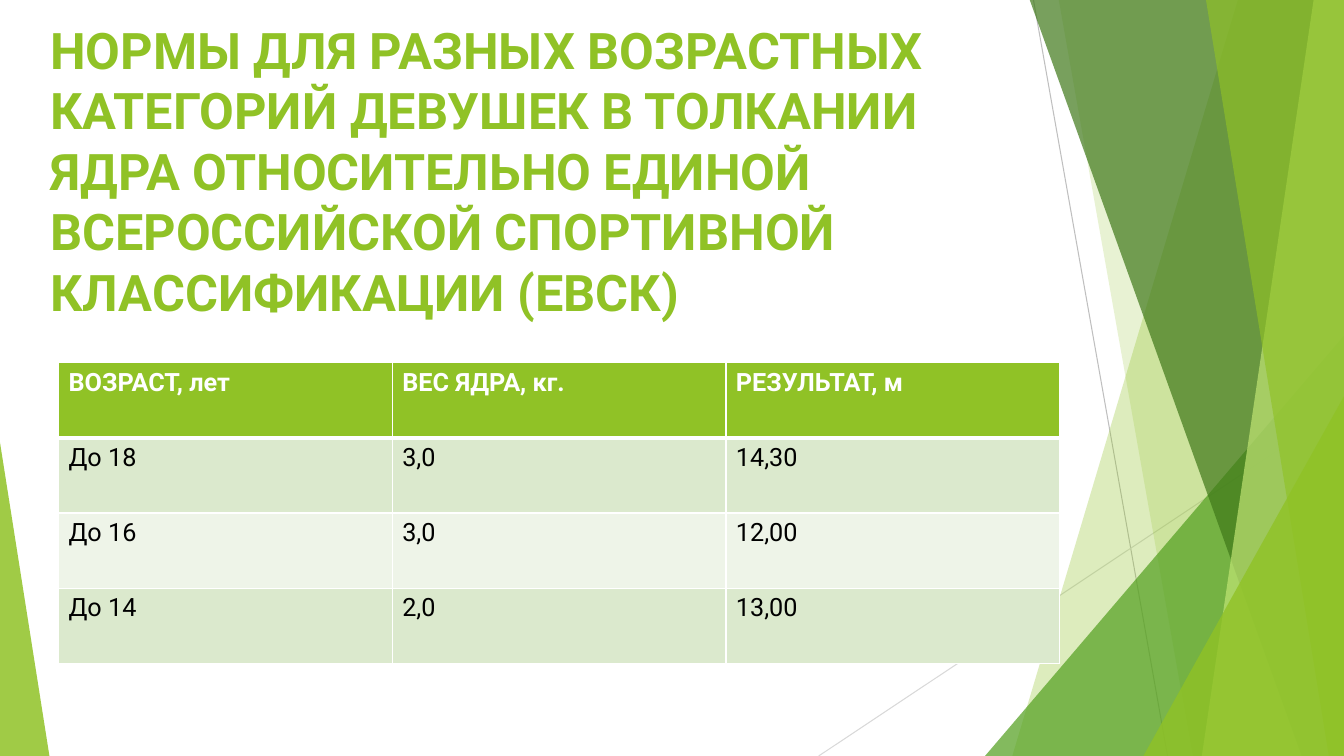
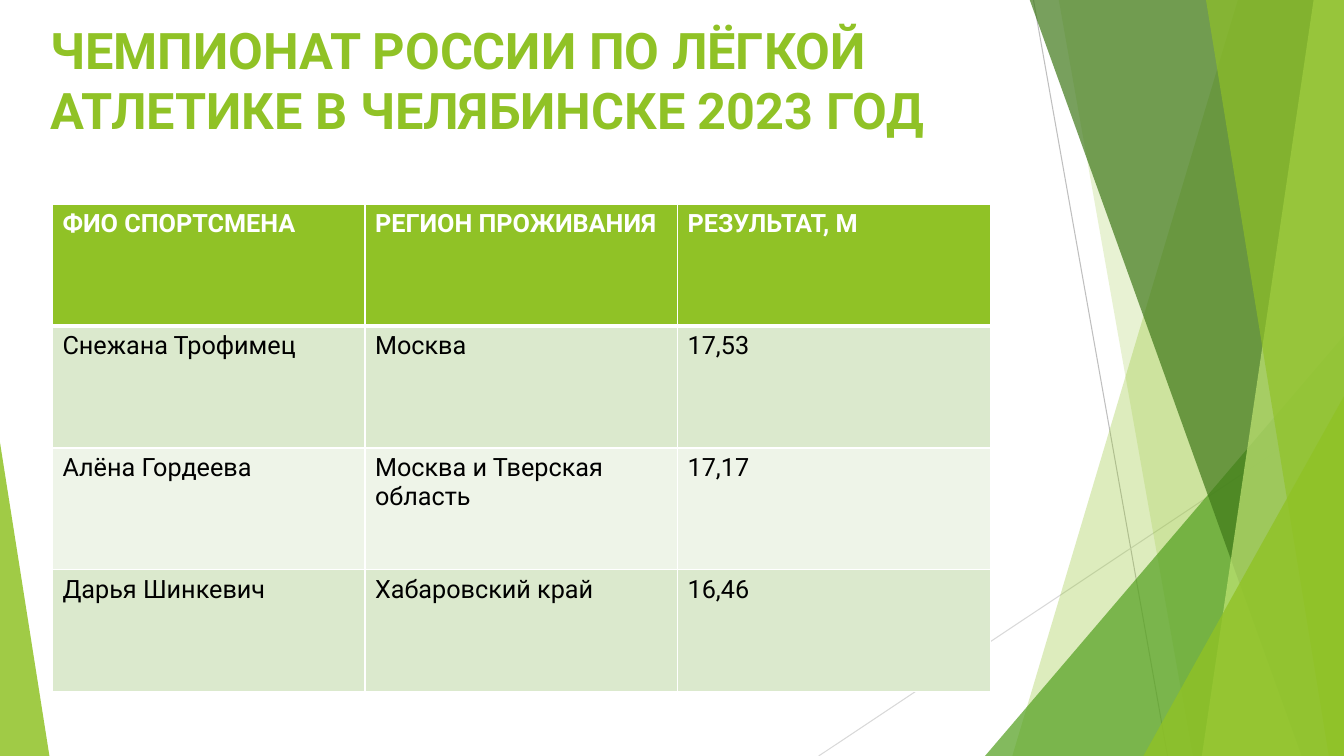
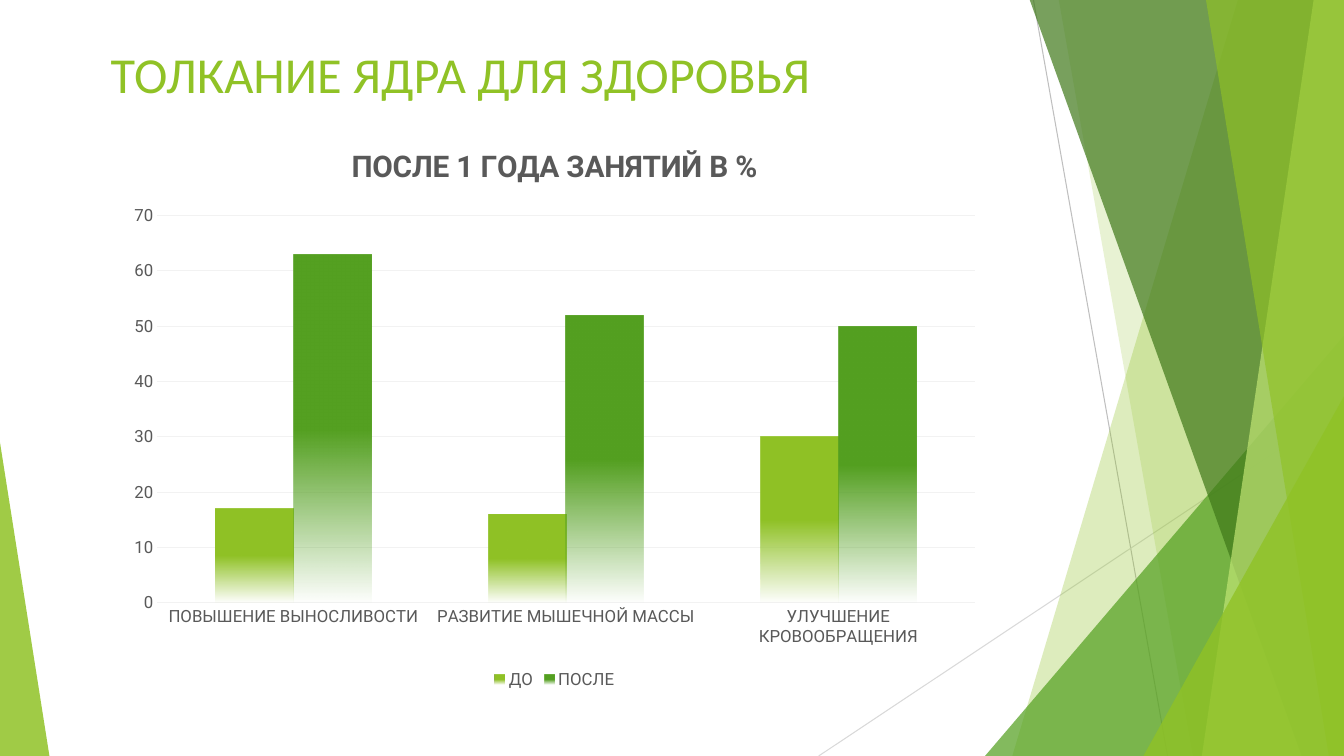
import pptx
import pptx.chart.data
import pptx.dml.color
import pptx.enum.chart
import pptx.enum.shapes
import pptx.enum.text
import pptx.oxml.ns
import pptx.util
import lxml.etree

Inches = pptx.util.Inches
qn = pptx.oxml.ns.qn

WIDTH, HEIGHT = 13.33, 7.5
FONT = "Roboto"
HEX = {
    "lime": "90C226", "green": "54A021", "forest": "3F7819", "pale": "C0E474",
    "line": "BFBFBF", "faint": "D9D9D9", "grid": "F2F2F2", "gray": "595959",
    "white": "FFFFFF", "black": "000000", "band": "DBE9CD", "light": "EEF4E8",
}
COLORS = {name: pptx.dml.color.RGBColor.from_string(code) for name, code in HEX.items()}


def set_alpha(element, percent):
    """Make the last colour inside the element partly transparent."""
    color = element.findall(".//" + qn("a:srgbClr"))[-1]
    lxml.etree.SubElement(color, qn("a:alpha"), val=str(percent * 1000))


def write(frame, text, size, color, bold=False, font=FONT):
    frame.word_wrap = True
    span = frame.paragraphs[0].add_run()
    span.text = text
    span.font.size = pptx.util.Pt(size)
    span.font.name = font
    span.font.bold = bold
    span.font.color.rgb = COLORS[color]


deck = pptx.Presentation()
deck.slide_width, deck.slide_height = Inches(WIDTH), Inches(HEIGHT)
layout = deck.slide_layouts[6]
for placeholder in list(layout.placeholders):
    placeholder.element.getparent().remove(placeholder.element)
pages = [deck.slides.add_slide(layout) for _ in range(3)]

# Shared decoration: drawn once, then moved to the layout
shapes = pages[0].shapes
for x1, y1, x2, y2, color in [(10.25, 0, 11.58, HEIGHT, "line"),
                              (WIDTH, 4.03, 8.12, HEIGHT, "faint")]:
    line = shapes.add_connector(pptx.enum.shapes.MSO_CONNECTOR.STRAIGHT,
                                Inches(x1), Inches(y1), Inches(x2), Inches(y2))
    line.line.color.rgb = COLORS[color]
    line.line.width = pptx.util.Pt(0.75)
    lxml.etree.SubElement(line.element.spPr, qn("a:effectLst"))

# Bands reach the right edge: (top x, bottom x); triangles: (left, top, width, peak)
decoration = [
    ((12.28, 10.04), "lime", 30),
    ((10.5, 11.83), "lime", 20),
    ((9.77, 3.33, 3.56, 1), "green", 72),
    ((10.21, 12.91), "forest", 70),
    ((13.03, 11.92), "pale", 70),
    ((11.96, 13.18), "lime", 65),
    ((11.34, 3.93, 1.99, 1), "lime", 80),
    ((0, 4.39, 0.49, 0), "lime", 85),
]
for geometry, color, opacity in decoration:
    if len(geometry) == 2:
        top_x, bottom_x = geometry
        outline = shapes.build_freeform(Inches(top_x), Inches(-0.01))
        corners = [(WIDTH, -0.01), (WIDTH, HEIGHT), (bottom_x, HEIGHT)]
        outline.add_line_segments([(Inches(x), Inches(y)) for x, y in corners], close=True)
        facet = outline.convert_to_shape()
    else:
        left, top, width, peak = geometry
        facet = shapes.add_shape(pptx.enum.shapes.MSO_SHAPE.ISOSCELES_TRIANGLE,
                                 Inches(left), Inches(top), Inches(width), Inches(HEIGHT - top))
        facet.adjustments[0] = peak
    facet.shadow.inherit = False
    facet.line.fill.background()
    facet.fill.solid()
    facet.fill.fore_color.rgb = COLORS[color]
    set_alpha(facet.element.spPr, opacity)

for shape in list(shapes):
    layout.shapes.element.append(shape.element)

# Titles
titles = [
    ("НОРМЫ ДЛЯ РАЗНЫХ ВОЗРАСТНЫХ КАТЕГОРИЙ ДЕВУШЕК В ТОЛКАНИИ ЯДРА ОТНОСИТЕЛЬНО "
     "ЕДИНОЙ ВСЕРОССИЙСКОЙ СПОРТИВНОЙ КЛАССИФИКАЦИИ (ЕВСК)",
     (0.4, 0.14, 9.93, 1.4), True, FONT),
    ("ЧЕМПИОНАТ РОССИИ ПО ЛЁГКОЙ АТЛЕТИКЕ В ЧЕЛЯБИНСКЕ 2023 ГОД",
     (0.4, 0.14, 9.93, 1.4), True, FONT),
    ("ТОЛКАНИЕ ЯДРА ДЛЯ ЗДОРОВЬЯ", (1, 0.38, 7.87, 1.08), False, "Calibri"),
]
for page, (text, place, bold, font) in zip(pages, titles):
    box = page.shapes.add_textbox(*[Inches(length) for length in place])
    box.text_frame.vertical_anchor = pptx.enum.text.MSO_ANCHOR.TOP
    write(box.text_frame, text, 36, "lime", bold, font)

# Tables
tables = [
    ((0.58, 3.6, 9.93, 2.98), [
        ("ВОЗРАСТ, лет", "ВЕС ЯДРА, кг.", "РЕЗУЛЬТАТ, м"),
        ("До 18", "3,0", "14,30"),
        ("До 16", "3,0", "12,00"),
        ("До 14", "2,0", "13,00"),
    ]),
    ((0.52, 2.03, 9.3, 4.83), [
        ("ФИО СПОРТСМЕНА", "РЕГИОН ПРОЖИВАНИЯ", "РЕЗУЛЬТАТ, М"),
        ("Снежана Трофимец", "Москва", "17,53"),
        ("Алёна Гордеева", "Москва и Тверская область", "17,17"),
        ("Дарья Шинкевич", "Хабаровский край", "16,46"),
    ]),
]
for page, (place, rows) in zip(pages, tables):
    frame = page.shapes.add_table(len(rows), len(rows[0]), *[Inches(length) for length in place])
    for row_index, row in enumerate(rows):
        header = row_index == 0
        fill = "lime" if header else "band" if row_index % 2 else "light"
        for column_index, text in enumerate(row):
            cell = frame.table.cell(row_index, column_index)
            write(cell.text_frame, text, 18, "white" if header else "black", header)
            # Borders come before the fill in the cell properties
            properties = cell._tc.get_or_add_tcPr()
            for side in "LRTB":
                thick = (header and side == "B") or (row_index == 1 and side == "T")
                border = lxml.etree.SubElement(properties, qn("a:ln" + side),
                                               w=str(pptx.util.Pt(3 if thick else 1)))
                solid = lxml.etree.SubElement(border, qn("a:solidFill"))
                lxml.etree.SubElement(solid, qn("a:srgbClr"), val=HEX["white"])
            cell.fill.solid()
            cell.fill.fore_color.rgb = COLORS[fill]

# Chart
data = pptx.chart.data.CategoryChartData()
data.categories = ["ПОВЫШЕНИЕ ВЫНОСЛИВОСТИ", "РАЗВИТИЕ МЫШЕЧНОЙ МАССЫ", "УЛУЧШЕНИЕ КРОВООБРАЩЕНИЯ"]
data.add_series("ДО", [17, 16, 30])
data.add_series("ПОСЛЕ", [63, 52, 50])
chart = pages[2].shapes.add_chart(pptx.enum.chart.XL_CHART_TYPE.COLUMN_CLUSTERED,
                                  Inches(1.16), Inches(1.24), Inches(8.68), Inches(5.64),
                                  data).chart
chart.has_title = True
write(chart.chart_title.text_frame, "ПОСЛЕ 1 ГОДА ЗАНЯТИЙ В %", 21.3, "gray", True)
chart.chart_title.include_in_layout = False
chart.has_legend = True
chart.legend.position = pptx.enum.chart.XL_LEGEND_POSITION.BOTTOM
chart.legend.include_in_layout = False

for axis in (chart.category_axis, chart.value_axis):
    axis.major_tick_mark = axis.minor_tick_mark = pptx.enum.chart.XL_TICK_MARK.NONE
    axis.format.line.fill.background()
for font in (chart.font, chart.legend.font,
             chart.category_axis.tick_labels.font, chart.value_axis.tick_labels.font):
    font.size = pptx.util.Pt(12)
    font.name = FONT
    font.color.rgb = COLORS["gray"]
chart.value_axis.minimum_scale, chart.value_axis.maximum_scale = 0, 70
chart.value_axis.major_unit = 10
grid = chart.value_axis.major_gridlines.format.line
grid.color.rgb = COLORS["grid"]
grid.width = pptx.util.Pt(0.75)

plot = chart.plots[0]
plot.vary_by_categories = False
plot.gap_width, plot.overlap = 150, 0
series_elements = chart.element.iter(qn("c:ser"))
for series, element, color in zip(plot.series, series_elements, ["lime", "green"]):
    series.invert_if_negative = False
    fade = series.format.fill
    fade.gradient()
    fade.gradient_angle = 270
    for stop, position in zip(fade.gradient_stops, [0.5, 1]):
        stop.position = position
        stop.color.rgb = COLORS[color]
    set_alpha(element, 0)

deck.save("out.pptx")
